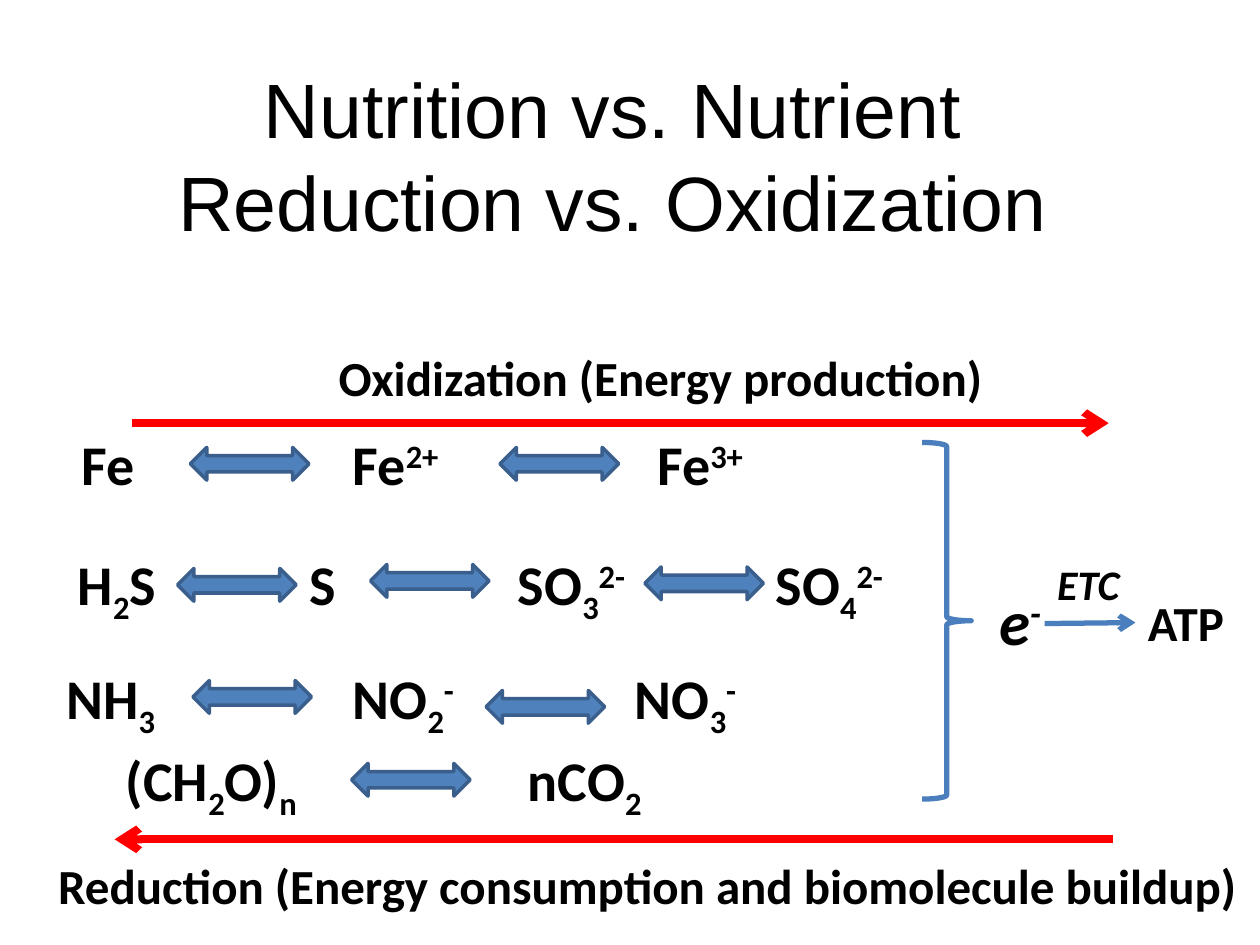
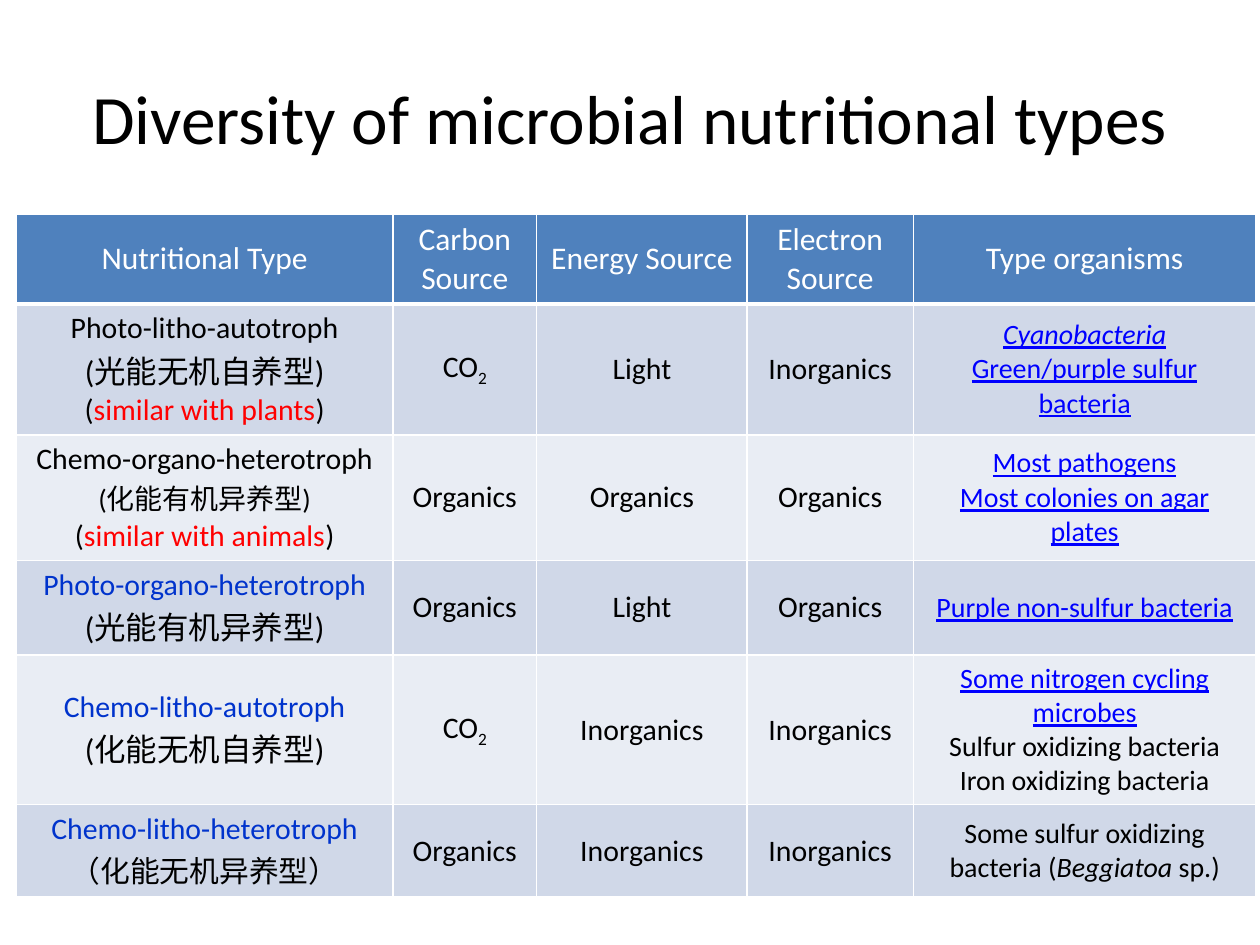
from dataclasses import dataclass

import pptx
import pptx.dml.color
import pptx.enum.shapes
import pptx.enum.text
import pptx.oxml
import pptx.oxml.ns
import pptx.util

Cm = pptx.util.Cm
Pt = pptx.util.Pt
Shape = pptx.enum.shapes.MSO_SHAPE
Align = pptx.enum.text.PP_ALIGN
Anchor = pptx.enum.text.MSO_ANCHOR
qn = pptx.oxml.ns.qn


@dataclass(frozen=True)
class Theme:
    font: str = "Calibri"
    black: str = "000000"
    white: str = "FFFFFF"
    red: str = "FF0000"
    blue: str = "0033CC"
    link: str = "0000FF"
    fill: str = "4F81BD"
    edge: str = "3A5F8C"
    line: str = "4B7EBC"
    bands: tuple = ("D0D8E8", "E9EDF4")
    formula: float = 32
    label: float = 28
    head: float = 18
    body: float = 17
    small: float = 16


THEME = Theme()

# One tuple per reaction row: top, formulas (left, text), arrows (left, top)
CHAINS = [
    (8.53, [(1.4, "Fe"), (6.86, "Fe|^2+"), (13, "Fe|^3+")],
     [(3.84, 9.02), (10.08, 9.02)]),
    (10.95, [(1.32, "H|_2|S"), (5.99, "S"), (10.19, "SO|_3|^2-"),
             (15.39, "SO|_4|^2-")],
     [(3.58, 11.46), (7.47, 11.38), (13, 11.43)]),
    (13.25, [(1.09, "NH|_3"), (6.86, "NO|_2|^-"), (12.55, "NO|_3|^-")],
     [(3.89, 13.72), (9.8, 13.92)]),
    (14.91, [(2.29, "(CH|_2|O)|_n"), (10.39, "nCO|_2")], [(7.09, 15.39)]),
]

HEADS = ["Nutritional Type", "Carbon Source", "Energy Source",
         "Electron Source", "Type organisms"]
# Type lines, size of the Chinese line, three sources, organisms
TYPES = [
    (["Photo-litho-autotroph", "(光能无机自养型)", "(|!similar with plants|)"], 18,
     ["CO|_2", "Light", "Inorganics"],
     ["@*Cyanobacteria", "@Green/purple sulfur bacteria"]),
    (["Chemo-organo-heterotroph", "(化能有机异养型)",
      "(|!similar with animals|)"], 16,
     ["Organics", "Organics", "Organics"],
     ["@Most pathogens", "@Most colonies on agar plates"]),
    (["#Photo-organo-heterotroph", "(光能有机异养型)"], 18,
     ["Organics", "Light", "Organics"], ["@Purple non-sulfur bacteria"]),
    (["#Chemo-litho-autotroph", "(化能无机自养型)"], 18,
     ["CO|_2", "Inorganics", "Inorganics"],
     ["@Some nitrogen cycling microbes", "Sulfur oxidizing bacteria",
      "Iron oxidizing bacteria"]),
    (["#Chemo-litho-heterotroph", "（化能无机异养型）"], 17,
     ["Organics", "Inorganics", "Inorganics"],
     ["Some sulfur oxidizing bacteria (|*Beggiatoa| sp.)"]),
]
COLS = [7.59, 2.9, 4.24, 3.35, 6.91]
ROWS = [1.57, 1.7, 1.7, 1.37, 2.18, 1.57]


def rgb(code):
    return pptx.dml.color.RGBColor.from_string(code)


def write(frame, lines, sizes, color=THEME.black, font=THEME.font,
          align=Align.CENTER, bold=False):
    """Fill a frame; '|' splits runs and leading marks style each run:
    _ lower, ^ raised, * italic, ! red, # blue, @ link."""
    inks = {"!": THEME.red, "#": THEME.blue, "@": THEME.link}
    shifts = {"_": "-25000", "^": "30000"}
    for index, (line, size) in enumerate(zip(lines, sizes)):
        para = frame.add_paragraph() if index else frame.paragraphs[0]
        para.alignment = align
        for part in line.split("|"):
            text = part.lstrip("_^*!#@")
            marks = part[:len(part) - len(text)]
            run = para.add_run()
            run.text = text
            run.font.name = font
            run.font.size = Pt(size)
            run.font.bold = bold
            run.font.italic = "*" in marks
            run.font.underline = "@" in marks
            ink = next((inks[m] for m in marks if m in inks), color)
            run.font.color.rgb = rgb(ink)
            for mark in marks:
                if mark in shifts:
                    run._r.get_or_add_rPr().set("baseline", shifts[mark])


def add_slide(deck, box, lines, size, font, anchor):
    slide = deck.slides.add_slide(deck.slide_layouts[5])
    title = slide.shapes.title
    title.left, title.top, title.width, title.height = map(Cm, box)
    frame = title.text_frame
    frame.auto_size = pptx.enum.text.MSO_AUTO_SIZE.NONE
    frame.vertical_anchor = anchor
    write(frame, lines, [size] * len(lines), font=font)
    return slide


def add_label(slide, box, text, size, align=Align.LEFT):
    frame = slide.shapes.add_textbox(*map(Cm, box)).text_frame
    frame.word_wrap = True
    write(frame, [text], [size], align=align, bold=True)


def add_shape(slide, kind, box, edge, width, fill=None):
    shape = slide.shapes.add_shape(kind, *map(Cm, box))
    shape.shadow.inherit = False
    if fill:
        shape.fill.solid()
        shape.fill.fore_color.rgb = rgb(fill)
    else:
        shape.fill.background()
    shape.line.color.rgb = rgb(edge)
    shape.line.width = Pt(width)


def add_arrow(slide, ends, color, width):
    arrow = slide.shapes.add_connector(
        pptx.enum.shapes.MSO_CONNECTOR.STRAIGHT, *map(Cm, ends))
    arrow.line.color.rgb = rgb(color)
    arrow.line.width = Pt(width)
    line = arrow.line._get_or_add_ln()
    line.append(pptx.oxml.parse_xml(
        f'<a:tailEnd {pptx.oxml.ns.nsdecls("a")} type="arrow"/>'))
    props = arrow._element.spPr
    props.append(props.makeelement(qn("a:effectLst"), {}))


def style_cell(cell, fill, base):
    """Draw white borders, with a base of the given points, then the fill."""
    props = cell._tc.get_or_add_tcPr()
    for side, width in zip("LRTB", (1, 1, 1, base)):
        props.append(pptx.oxml.parse_xml(
            f'<a:ln{side} {pptx.oxml.ns.nsdecls("a")} w="{Pt(width)}">'
            f'<a:solidFill><a:srgbClr val="{THEME.white}"/></a:solidFill>'
            f'</a:ln{side}>'))
    cell.fill.solid()
    cell.fill.fore_color.rgb = rgb(fill)
    cell.vertical_anchor = Anchor.MIDDLE


def add_types(slide):
    table = slide.shapes.add_table(
        len(ROWS), len(COLS), Cm(0.33), Cm(4.32),
        Cm(sum(COLS)), Cm(sum(ROWS))).table
    for col, width in zip(table.columns, COLS):
        col.width = Cm(width)
    for row, height in zip(table.rows, ROWS):
        row.height = Cm(height)
    for cell, text in zip(table.rows[0].cells, HEADS):
        style_cell(cell, THEME.fill, 3)
        write(cell.text_frame, [text], [THEME.head], THEME.white)
    for index, (names, size, sources, kinds) in enumerate(TYPES):
        texts = [names] + [[source] for source in sources] + [kinds]
        sizes = [[THEME.body, size, THEME.body]]
        sizes += [[THEME.body]] * len(sources) + [[THEME.small] * len(kinds)]
        cells = table.rows[index + 1].cells
        for cell, lines, points in zip(cells, texts, sizes):
            style_cell(cell, THEME.bands[index % 2], 1)
            write(cell.text_frame, lines, points)


def add_chains(slide):
    for top, terms, arrows in CHAINS:
        for left, text in terms:
            width = 7.19 if text.startswith("(") else 3.61
            add_label(slide, (left, top, width, 1.63), text, THEME.formula)
        for left, high in arrows:
            add_shape(slide, Shape.LEFT_RIGHT_ARROW, (left, high, 2.39, 0.66),
                      THEME.edge, 2, THEME.fill)


def main():
    deck = pptx.Presentation()
    deck.slide_width, deck.slide_height = Cm(25.4), Cm(19.05)

    slide = add_slide(deck, (2.51, 1.12, 19.69, 4.01),
                      ["Nutrition vs. Nutrient", "Reduction vs. Oxidization"],
                      44, "Arial", Anchor.TOP)
    add_chains(slide)
    add_label(slide, (1.78, 6.88, 23.06, 1.45),
              "Oxidization (Energy production)", THEME.label, Align.CENTER)
    add_label(slide, (0.79, 17.12, 24.51, 1.45),
              "Reduction (Energy consumption and biomolecule buildup)",
              THEME.label, Align.CENTER)
    add_arrow(slide, (2.67, 8.53, 22.35, 8.53), THEME.red, 4.5)
    add_arrow(slide, (22.43, 16.92, 2.31, 16.92), THEME.red, 4.5)
    add_shape(slide, Shape.RIGHT_BRACE, (18.59, 8.92, 0.99, 7.19),
              THEME.line, 3)
    add_label(slide, (19.89, 11.61, 2.01, 1.8), "*e|^*-", 36)
    add_label(slide, (21.06, 11.13, 3.76, 1.27), "*ETC", 24)
    add_label(slide, (22.89, 11.81, 2.51, 1.45), "ATP", THEME.label)
    add_arrow(slide, (21.06, 12.57, 22.89, 12.55), THEME.line, 3)

    slide = add_slide(deck, (1.27, 0.76, 22.86, 3.18),
                      ["Diversity of microbial nutritional types"],
                      39.6, THEME.font, Anchor.MIDDLE)
    add_types(slide)
    deck.save("out.pptx")


if __name__ == "__main__":
    main()
